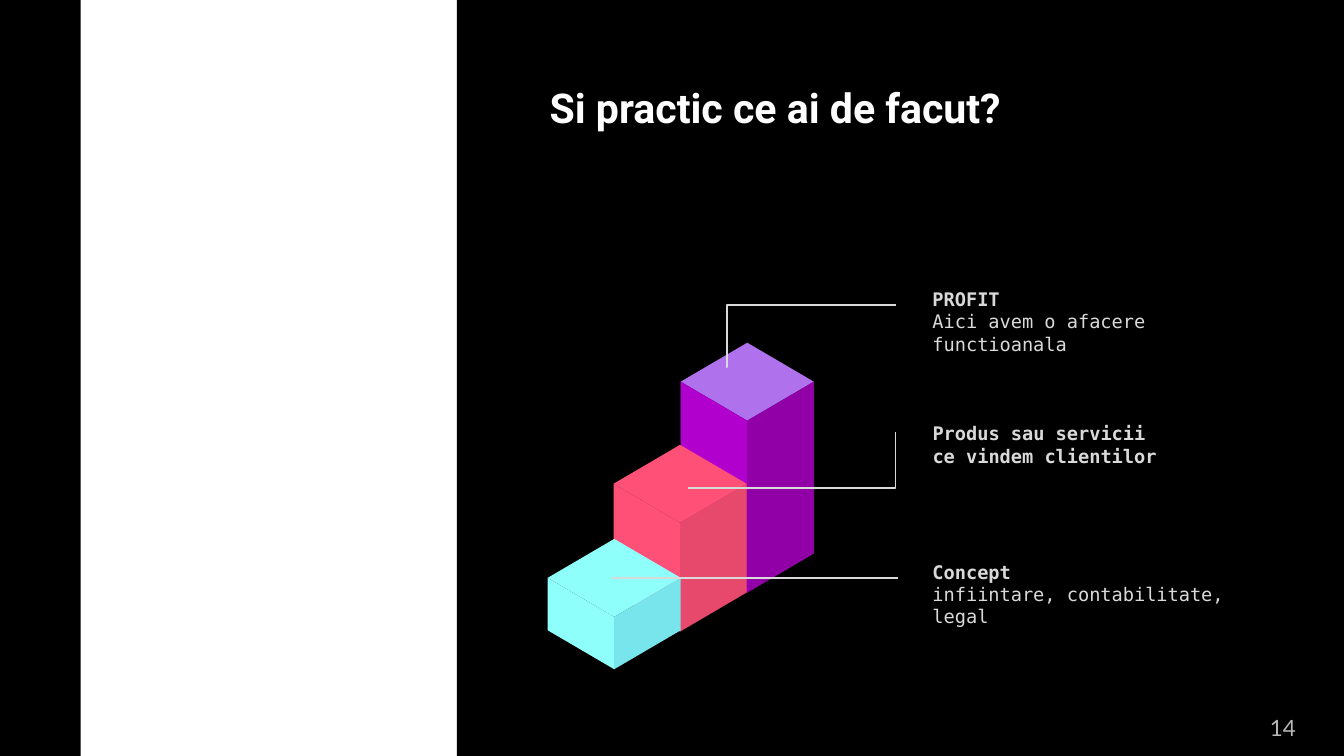
from dataclasses import dataclass

from lxml import etree
from pptx import Presentation
from pptx.dml.color import RGBColor
from pptx.enum.shapes import MSO_CONNECTOR, MSO_SHAPE
from pptx.enum.text import MSO_ANCHOR, MSO_AUTO_SIZE, PP_ALIGN
from pptx.oxml.ns import qn
from pptx.util import Inches, Pt

RECTANGLE = MSO_SHAPE.RECTANGLE
ELBOW = MSO_CONNECTOR.ELBOW
STRAIGHT = MSO_CONNECTOR.STRAIGHT
TOP = MSO_ANCHOR.TOP
MIDDLE = MSO_ANCHOR.MIDDLE
LEFT = PP_ALIGN.LEFT
NO_AUTOFIT = MSO_AUTO_SIZE.NONE

PAGE_WIDTH = Inches(10)
PAGE_HEIGHT = PAGE_WIDTH * 9 // 16
COLORS = {
    "panel": "000000", "title": "FFFFFF", "label": "D9D9D9", "number": "B7B7B7",
    "violet_top": "B071ED", "violet_left": "B100CD", "violet_right": "9100A7",
    "red_top": "FF5077", "red_left": "FF5077", "red_right": "E7496C",
    "aqua_top": "8FFFFB", "aqua_left": "8FFFFB", "aqua_right": "78E5EC",
}
HALF_WIDTH = 0.495  # half the width of a block
HALF_DEPTH = 0.29  # half the height of its top face


@dataclass
class Block:
    color: str
    center: float
    top: float
    height: float


@dataclass
class Label:
    top: float
    width: float
    height: float
    lines: list[tuple[str, bool]]


@dataclass
class Leader:
    start: tuple[float, float]
    end: tuple[float, float]
    bend: float | None = None  # share of the width before the corner


BLOCKS = [
    Block("violet", 5.56, 2.55, 1.28),
    Block("red", 5.06, 3.31, 0.81),
    Block("aqua", 4.57, 4.01, 0.39),
]
LABELS = [
    Label(2.04, 2.06, 0.77, [("PROFIT", True), ("Aici avem o afacere functioanala", False)]),
    Label(3.04, 1.91, 0.47, [("Produs sau servicii", True), ("ce vindem clientilor", True)]),
    Label(4.07, 2.37, 0.64, [("Concept", True), ("infiintare, contabilitate, legal", False)]),
]
LEADERS = [
    Leader((6.67, 2.27), (5.4, 2.73), 0.993),
    Leader((6.67, 3.22), (5.12, 3.63), 0.006),
    Leader((4.55, 4.3), (6.68, 4.3)),
]


def color(name: str) -> RGBColor:
    return RGBColor.from_string(COLORS[name])


def paint(shape, name: str) -> None:
    shape.shadow.inherit = False
    shape.fill.solid()
    shape.fill.fore_color.rgb = color(name)
    shape.line.fill.background()


def set_frame(box, anchor) -> None:
    frame = box.text_frame
    frame.word_wrap = True
    frame.auto_size = NO_AUTOFIT
    frame.vertical_anchor = anchor
    frame.margin_left = frame.margin_right = Inches(0.1)
    frame.margin_top = frame.margin_bottom = Inches(0.1)


def style(para, font_name: str, size: int, name: str, bold: bool = False) -> None:
    para.alignment = LEFT
    for span in para.runs:
        span.font.name = font_name
        span.font.size = Pt(size)
        span.font.bold = bold
        span.font.color.rgb = color(name)


def add_panel(page, left: float, width: float) -> None:
    panel = page.shapes.add_shape(
        RECTANGLE, Inches(left), 0, Inches(width), PAGE_HEIGHT)
    paint(panel, "panel")


def add_block(page, block: Block) -> None:
    left, right = block.center - HALF_WIDTH, block.center + HALF_WIDTH
    side, front = block.top + HALF_DEPTH, block.top + 2 * HALF_DEPTH
    base = side + block.height
    front_edge = [(block.center, base + HALF_DEPTH), (block.center, front)]
    faces = {
        "top": [(block.center, block.top), (left, side),
                (block.center, front), (right, side)],
        "left": [(left, side), (left, base), *front_edge],
        "right": [(right, side), (right, base), *front_edge],
    }
    group = page.shapes.add_group_shape()
    for face, corners in faces.items():
        points = [(Inches(x), Inches(y)) for x, y in corners]
        builder = group.shapes.build_freeform(*points[0])
        builder.add_line_segments(points[1:], close=True)
        paint(builder.convert_to_shape(), f"{block.color}_{face}")


def add_label(page, label: Label) -> None:
    box = page.shapes.add_textbox(
        Inches(6.84), Inches(label.top), Inches(label.width), Inches(label.height))
    set_frame(box, TOP)
    box.text_frame.text = "\n".join(text for text, _ in label.lines)
    for para, (_, bold) in zip(box.text_frame.paragraphs, label.lines):
        style(para, "DejaVu Sans Mono", 10, "label", bold)


def add_leader(page, leader: Leader) -> None:
    kind = STRAIGHT if leader.bend is None else ELBOW
    ends = [Inches(value) for value in leader.start + leader.end]
    line = page.shapes.add_connector(kind, *ends)
    line.line.color.rgb = color("label")
    line.line.width = Pt(0.75)
    properties = line._element.spPr
    etree.SubElement(properties, qn("a:effectLst"))
    if leader.bend is not None:
        geometry = properties.find(qn("a:prstGeom"))
        guides = geometry.find(qn("a:avLst"))
        if guides is None:
            guides = etree.SubElement(geometry, qn("a:avLst"))
        guide = etree.SubElement(guides, qn("a:gd"))
        guide.set("name", "adj1")
        guide.set("fmla", f"val {round(leader.bend * 100000)}")


def main() -> None:
    deck = Presentation()
    deck.slide_width, deck.slide_height = PAGE_WIDTH, PAGE_HEIGHT
    page = deck.slides.add_slide(deck.slide_layouts[5])

    # Black side panels
    add_panel(page, 3.4, 6.6)
    add_panel(page, 0, 0.6)

    # Title, raised above the panels
    title = page.shapes.title
    title.left, title.top = Inches(3.99), Inches(0.51)
    title.width, title.height = Inches(5.52), Inches(0.53)
    set_frame(title, TOP)
    title.text_frame.text = "Si practic ce ai de facut?"
    style(title.text_frame.paragraphs[0], "Roboto", 22, "title", True)
    page.shapes._spTree.append(title._element)

    # Page number
    number = page.shapes.add_textbox(Inches(9.35), Inches(5.2), Inches(0.6), Inches(0.42))
    set_frame(number, MIDDLE)
    number.text_frame.text = "14"
    style(number.text_frame.paragraphs[0], "Lato", 12, "number")

    # Stairs, their labels and the leader lines
    for label in LABELS:
        add_label(page, label)
    for block in BLOCKS:
        add_block(page, block)
    for leader in LEADERS:
        add_leader(page, leader)

    deck.save("out.pptx")


if __name__ == "__main__":
    main()
